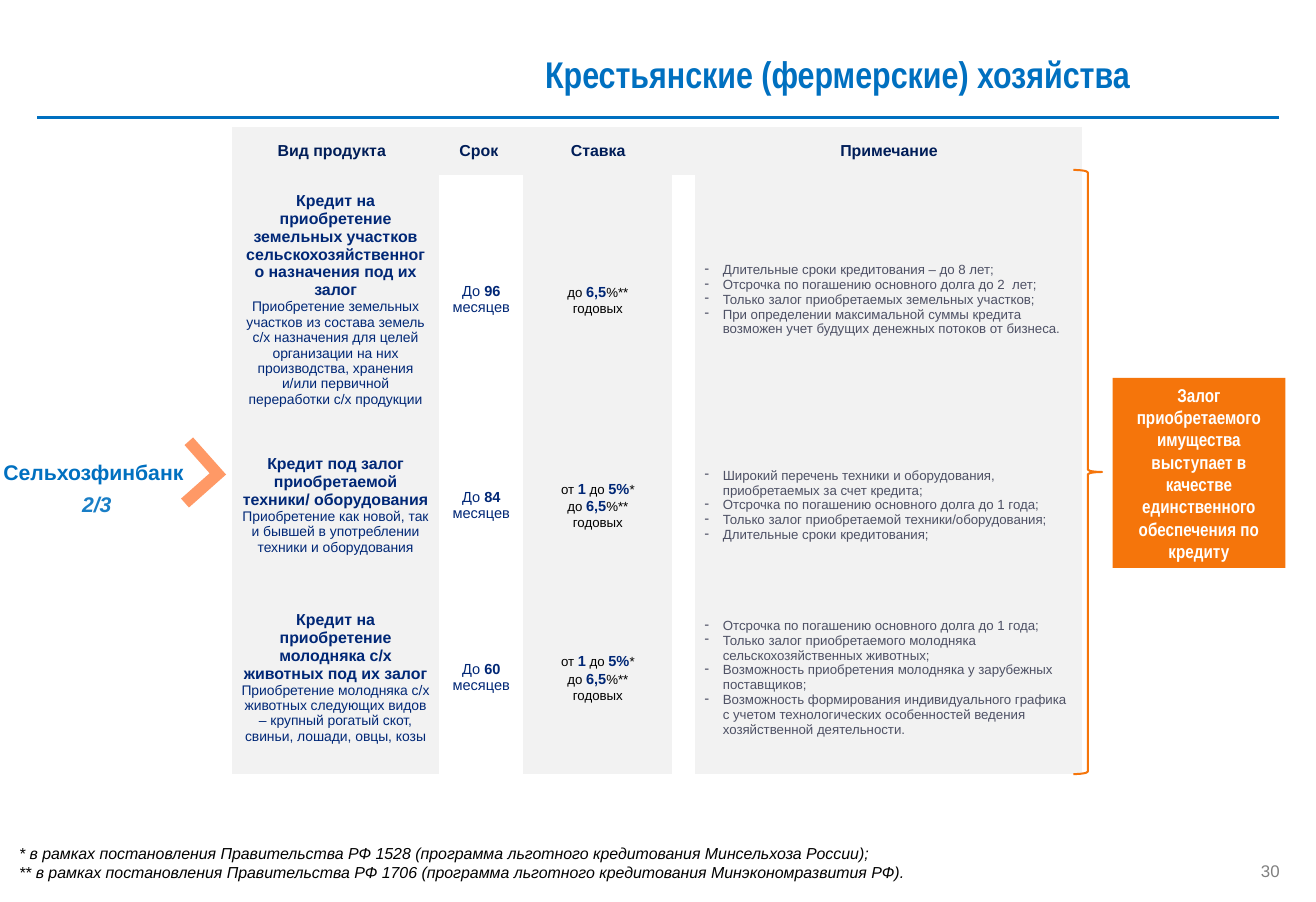
from dataclasses import dataclass
from typing import NamedTuple

import pptx
import pptx.dml.color
import pptx.enum.shapes
import pptx.enum.text
import pptx.oxml
import pptx.oxml.ns
import pptx.util

SLIDE_WIDTH = pptx.util.Inches(13.78)
SLIDE_HEIGHT = pptx.util.Inches(9.45)
NO_GRID_STYLE = "{2D5ABB26-0587-4C30-8999-92F81FD0307C}"
SHAPES = pptx.enum.shapes.MSO_SHAPE
ALIGN = pptx.enum.text.PP_ALIGN
ANCHOR = pptx.enum.text.MSO_ANCHOR

COLOURS = {
    "blue": "0070C0", "page_blue": "197EC6", "navy": "002776", "header": "001D58",
    "note": "4E5165", "number": "808080", "black": "000000", "white": "FFFFFF",
    "panel": "F2F2F2", "orange": "F5750B", "chevron": "FF9966",
}

# Text formats: font name, size, colour, and what else applies
FORMATS = {
    "title": dict(name="Arial Narrow", size=28, color="blue", bold=True),
    "bank": dict(name="Arial", size=16, color="blue", bold=True),
    "part": dict(name="Arial", size=16, color="page_blue", bold=True, italic=True),
    "pledge": dict(name="Arial Narrow", size=14, color="white", bold=True),
    "header": dict(name="Arial", size=12, color="header", bold=True),
    "product": dict(name="Arial", size=12, color="navy", bold=True),
    "purpose": dict(name="Arial", size=10.5, color="navy"),
    "term": dict(name="Arial", size=11, color="navy"),
    "value": dict(name="Arial", size=11, color="navy", bold=True),
    "rate": dict(name="Arial", size=10, color="black"),
    "note": dict(name="Arial", size=10, color="note"),
    "footnote": dict(name="Arial", size=12, color="black", italic=True),
    "number": dict(name="Arial", size=12.7, color="number"),
}


class Box(NamedTuple):
    """Left, top, width and height in percent of the slide's size."""
    left: float
    top: float
    width: float
    height: float


class Run(NamedTuple):
    text: str
    format: str


Line = list[Run]


@dataclass
class Label:
    box: Box
    lines: list[Line]
    align: ALIGN = ALIGN.LEFT
    anchor: ANCHOR = ANCHOR.TOP
    margin: bool = True
    spacing: float | None = None


@dataclass
class Loan:
    product: str
    purpose: str
    months: int
    rate: list[Line]
    notes: list[str]


def across(share: float) -> int:
    return round(SLIDE_WIDTH * share / 100)


def down(share: float) -> int:
    return round(SLIDE_HEIGHT * share / 100)


def place(box: Box) -> tuple[int, int, int, int]:
    return across(box.left), down(box.top), across(box.width), down(box.height)


def colour(name: str) -> pptx.dml.color.RGBColor:
    return pptx.dml.color.RGBColor.from_string(COLOURS[name])


def write(frame, lines: list[Line], align=ALIGN.LEFT, spacing=None, bullet=False) -> None:
    for index, line in enumerate(lines):
        paragraph = frame.add_paragraph() if index else frame.paragraphs[0]
        paragraph.alignment = align
        paragraph.line_spacing = spacing
        if bullet:
            properties = paragraph._p.get_or_add_pPr()
            indent = pptx.util.Inches(0.19)
            properties.set("marL", str(indent))
            properties.set("indent", str(-indent))
            mark = pptx.oxml.parse_xml(f'<a:buChar {pptx.oxml.ns.nsdecls("a")} char="-"/>')
            properties.append(mark)
        for text, format_name in line:
            run = paragraph.add_run()
            run.text = text
            for key, value in FORMATS[format_name].items():
                if key == "color":
                    run.font.color.rgb = colour(value)
                else:
                    setattr(run.font, key, pptx.util.Pt(value) if key == "size" else value)


def add_label(slide, label: Label) -> None:
    frame = slide.shapes.add_textbox(*place(label.box)).text_frame
    frame.word_wrap = True
    frame.vertical_anchor = label.anchor
    if not label.margin:
        for side in ("left", "top", "right", "bottom"):
            setattr(frame, f"margin_{side}", 0)
    write(frame, label.lines, label.align, label.spacing)


def add_shape(slide, kind: SHAPES, box: Box, fill: str = "", line: str = ""):
    shape = slide.shapes.add_shape(kind, *place(box))
    shape.shadow.inherit = False
    for part, name in ((shape.fill, fill), (shape.line.fill, line)):
        if name:
            part.solid()
            part.fore_color.rgb = colour(name)
        else:
            part.background()
    return shape


def add_table(slide, box: Box, columns: list[float], rows: list[float]):
    frame = slide.shapes.add_table(len(rows), len(columns), *place(box))
    table = frame.table
    table.first_row = table.horz_banding = False
    frame._element.xpath(".//a:tableStyleId")[0].text = NO_GRID_STYLE
    for column, width in zip(table.columns, columns):
        column.width = across(width)
    for row, height in zip(table.rows, rows):
        row.height = down(height)
    return table


def fill_cell(cell, lines: list[Line], filled: bool = True, **layout) -> None:
    cell.vertical_anchor = ANCHOR.MIDDLE
    if filled:
        cell.fill.solid()
        cell.fill.fore_color.rgb = colour("panel")
    else:
        cell.fill.background()
    write(cell.text_frame, lines, **layout)


RATE_END = [[Run("до ", "rate"), Run("6,5", "value"), Run("%**", "rate")],
            [Run("годовых", "rate")]]
RATE_RANGE = [[Run("от ", "rate"), Run("1", "value"), Run(" до ", "rate"),
               Run("5%", "value"), Run("*", "rate")]] + RATE_END

LOANS = [
    Loan("Кредит на приобретение земельных участков сельскохозяйственного назначения под их залог",
         "Приобретение земельных участков из состава земель с/х назначения для целей организации "
         "на них производства, хранения и/или первичной переработки с/х продукции",
         96, RATE_END,
         ["Длительные сроки кредитования – до 8 лет;",
          "Отсрочка по погашению основного долга до 2  лет;",
          "Только залог приобретаемых земельных участков;",
          "При определении максимальной суммы кредита возможен учет будущих денежных "
          "потоков от бизнеса."]),
    Loan("Кредит под залог приобретаемой техники/ оборудования",
         "Приобретение как новой, так и бывшей в употреблении техники и оборудования",
         84, RATE_RANGE,
         ["Широкий перечень техники и оборудования, приобретаемых за счет кредита;",
          "Отсрочка по погашению основного долга до 1 года;",
          "Только залог приобретаемой техники/оборудования;",
          "Длительные сроки кредитования;"]),
    Loan("Кредит на приобретение молодняка с/х животных под их залог",
         "Приобретение молодняка с/х животных следующих видов – крупный рогатый скот, "
         "свиньи, лошади, овцы, козы",
         60, RATE_RANGE,
         ["Отсрочка по погашению основного долга до 1 года;",
          "Только залог приобретаемого молодняка сельскохозяйственных животных;",
          "Возможность приобретения молодняка у зарубежных поставщиков;",
          "Возможность формирования индивидуального графика с учетом технологических "
          "особенностей ведения хозяйственной деятельности."]),
]
HEADINGS = ["Вид продукта", "Срок", "Ставка", "", "Примечание"]
LABELS = [
    Label(Box(40.71, 4.13, 46.73, 8.04), [[Run("Крестьянские (фермерские) хозяйства", "title")]],
          anchor=ANCHOR.MIDDLE),
    Label(Box(-0.94, 47.2, 15.6, 10.37), [[Run("Сельхозфинбанк", "bank")]],
          ALIGN.RIGHT, ANCHOR.MIDDLE),
    Label(Box(5.52, 53.97, 4.79, 3.92), [[Run("2/3", "part")]]),
    Label(Box(0.73, 93.02, 73.88, 5.29), [
        [Run("* в рамках постановления Правительства РФ 1528 (программа льготного "
             "кредитования Минсельхоза России);", "footnote")],
        [Run("** в рамках постановления Правительства РФ 1706 (программа льготного "
             "кредитования Минэкономразвития РФ).", "footnote")]]),
    Label(Box(94.19, 95.56, 3.05, 2.12), [[Run("30", "number")]], ALIGN.RIGHT,
          margin=False, spacing=pptx.util.Pt(14.3)),
]


def main() -> None:
    presentation = pptx.Presentation()
    presentation.slide_width, presentation.slide_height = SLIDE_WIDTH, SLIDE_HEIGHT
    slide = presentation.slides.add_slide(presentation.slide_layouts[6])

    # Rule under the title
    rule = slide.shapes.add_connector(pptx.enum.shapes.MSO_CONNECTOR.STRAIGHT, across(2.83),
                                      down(13.02), across(97.17), down(13.02))
    rule.line.color.rgb = colour("blue")
    rule.line.width = pptx.util.Pt(2.25)
    rule._element.spPr.append(
        pptx.oxml.parse_xml(f'<a:effectLst {pptx.oxml.ns.nsdecls("a")}/>'))

    # Chevron from the bank to its loans
    chevron = add_shape(slide, SHAPES.CORNER, Box(12.63, 49.63, 3.77, 5.5), "chevron")
    chevron.rotation = 228.4
    chevron.adjustments[0], chevron.adjustments[1] = 0.23, 0.24

    # Loans
    body = Box(17.63, 18.84, 64.51, 66.98)
    loans = add_table(slide, body, [15.75, 6.39, 11.32, 1.67, 29.39], [28.78, 16.83, 21.38])
    for row, loan in zip(loans.rows, LOANS):
        product, term, rate, gap, notes = row.cells
        fill_cell(product, [[Run(loan.product, "product")], [Run(loan.purpose, "purpose")]],
                  align=ALIGN.CENTER)
        fill_cell(term, [[Run("До ", "term"), Run(str(loan.months), "value"),
                          Run(" месяцев", "term")]], filled=False, align=ALIGN.CENTER)
        fill_cell(rate, loan.rate, align=ALIGN.CENTER, spacing=1.07)
        fill_cell(gap, [], filled=False)
        fill_cell(notes, [[Run(note, "note")] for note in loan.notes], bullet=True)

    # Column headings
    header = add_table(slide, Box(body.left, 14.07, body.width, 5.29),
                       [15.17, 7.18, 10.96, 1.96, 29.32], [5.29])
    for cell, heading in zip(header.rows[0].cells, HEADINGS):
        fill_cell(cell, [[Run(heading, "header")]] if heading else [], align=ALIGN.CENTER)

    # Brace and the pledge it leads to
    brace = add_shape(slide, SHAPES.RIGHT_BRACE, Box(81.57, body.top, 2.18, body.height),
                      line="orange")
    brace.line.width = pptx.util.Pt(1.5)
    pledge = add_shape(slide, SHAPES.RECTANGLE, Box(84.54, 41.9, 13.13, 21.06), "orange")
    pledge.text_frame.word_wrap = True
    write(pledge.text_frame, [[Run("Залог приобретаемого имущества выступает в качестве "
                                   "единственного обеспечения по кредиту", "pledge")]],
          ALIGN.CENTER)

    # Title, bank, footnotes and page number
    for label in LABELS:
        add_label(slide, label)

    presentation.save("out.pptx")


if __name__ == "__main__":
    main()
